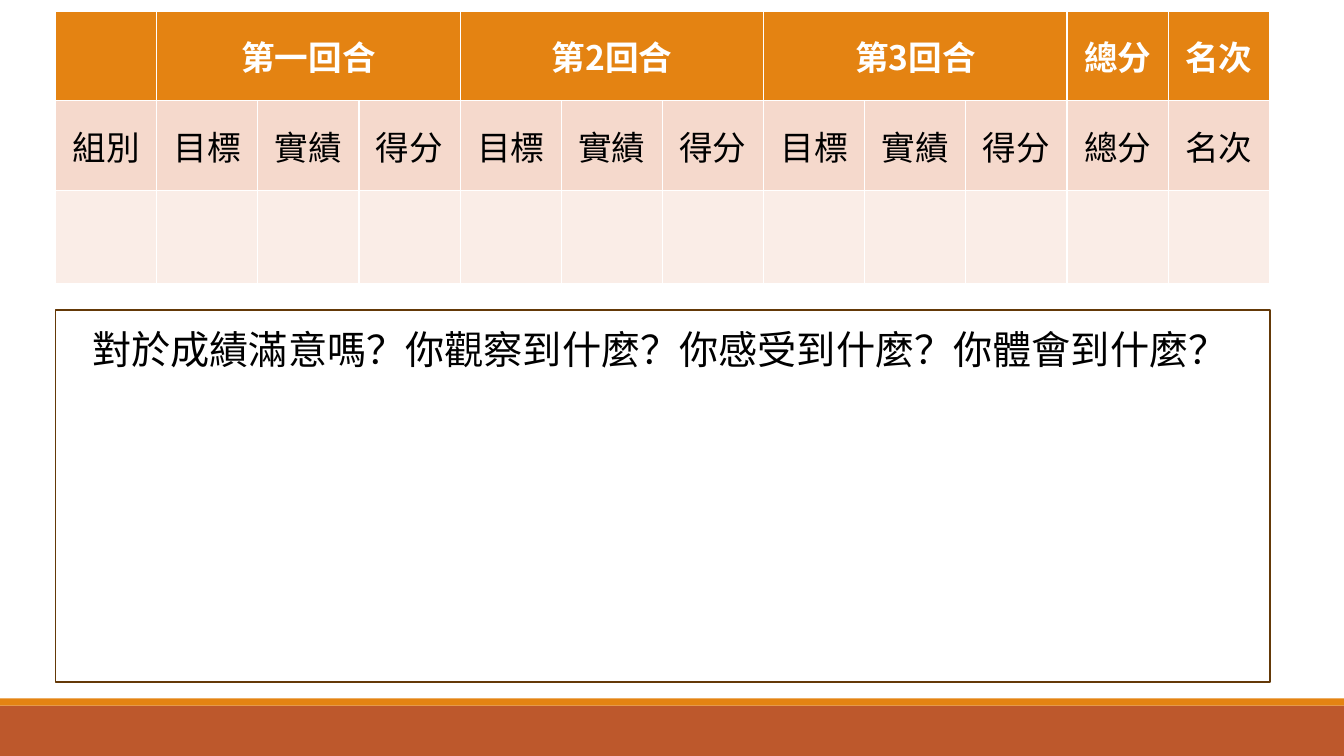
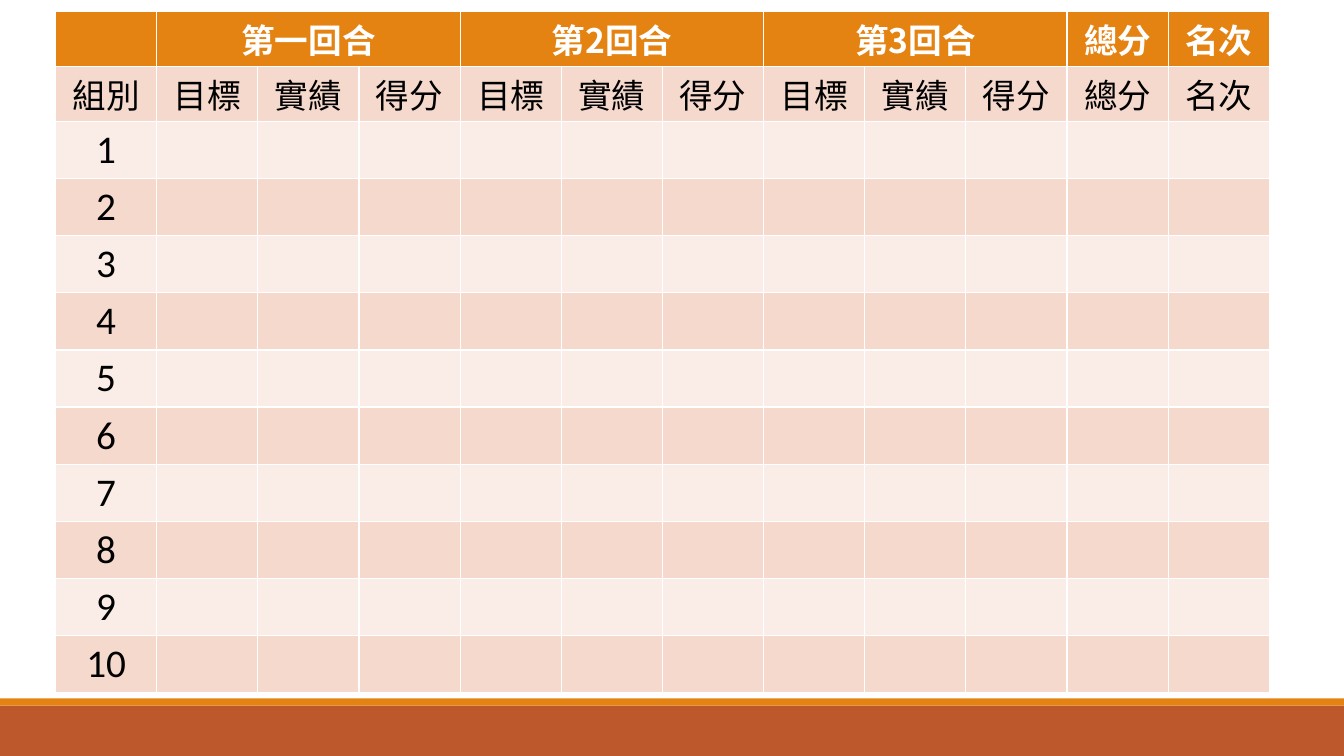
from typing import NamedTuple, Optional

from lxml.etree import SubElement
from pptx import Presentation
from pptx.dml.color import RGBColor
from pptx.enum.shapes import MSO_SHAPE as Preset
from pptx.enum.text import MSO_ANCHOR as Anchor, PP_ALIGN as Align
from pptx.oxml.ns import qn
from pptx.slide import Slide
from pptx.text.text import TextFrame
from pptx.util import Cm, Pt

ORANGE, RUST, BROWN = "E48312", "BD582C", "643908"
ROW_TINTS = ("FAEDE7", "F5D9CC")
WHITE, BLACK = "FFFFFF", "000000"
CJK, LATIN = "Noto Sans CJK SC", "Calibri"
SLIDE_WIDTH, SLIDE_HEIGHT = 33.87, 19.05
MARGIN, TABLE_TOP, COLUMN_WIDTH = 1.4, 0.28, 2.55
ROUNDS = ("第一回合", "第2回合", "第3回合")
MEASURES = ("目標", "實績", "得分")
TOTALS = ("總分", "名次")
SUBHEADS = ("組別", *MEASURES * len(ROUNDS), *TOTALS)
TABLE_WIDTH = COLUMN_WIDTH * len(SUBHEADS)
QUESTIONS = "對於成績滿意嗎？你觀察到什麼？你感受到什麼？你體會到什麼？"


class Panel(NamedTuple):
    left: float
    top: float
    width: float
    height: float
    fill: Optional[str] = None
    line: Optional[str] = None


FOOTER = (
    Panel(0, 17.78, SLIDE_WIDTH, 1.27, fill=RUST),
    Panel(0, 17.6, SLIDE_WIDTH, 0.18, fill=ORANGE),
)
DISCUSSION = Panel(MARGIN, 7.82, TABLE_WIDTH, 9.37, line=BROWN)


class Scoreboard(NamedTuple):
    groups: tuple[str, ...]
    head_height: float
    group_height: float


def rgb(code: str) -> RGBColor:
    return RGBColor.from_string(code)


def write(frame: TextFrame, text: str, *, size: float = 24, font: str = CJK,
          color: str = BLACK, bold: bool = False, align: Align = Align.CENTER) -> None:
    paragraph = frame.paragraphs[0]
    paragraph.alignment = align
    run = paragraph.add_run()
    run.text = text
    run.font.size, run.font.bold, run.font.name = Pt(size), bold, font
    run.font.color.rgb = rgb(color)
    SubElement(run.font._element, qn("a:ea")).set("typeface", font)


def draw_panel(slide: Slide, panel: Panel) -> None:
    shape = slide.shapes.add_shape(Preset.RECTANGLE, Cm(panel.left), Cm(panel.top),
                                   Cm(panel.width), Cm(panel.height))
    shape.shadow.inherit = False
    if panel.fill:
        shape.fill.solid()
        shape.fill.fore_color.rgb = rgb(panel.fill)
    else:
        shape.fill.background()
    if panel.line:
        shape.line.color.rgb = rgb(panel.line)
        shape.line.width = Pt(1.25)
    else:
        shape.line.fill.background()


def draw_scoreboard(slide: Slide, board: Scoreboard) -> None:
    heights = [board.head_height] * 2 + [board.group_height] * len(board.groups)
    table = slide.shapes.add_table(len(heights), len(SUBHEADS), Cm(MARGIN), Cm(TABLE_TOP),
                                   Cm(TABLE_WIDTH), Cm(sum(heights))).table
    for column in table.columns:
        column.width = Cm(COLUMN_WIDTH)
    for index, (row, height) in enumerate(zip(table.rows, heights)):
        row.height = Cm(height)
        for cell in row.cells:
            cell.fill.solid()
            cell.fill.fore_color.rgb = rgb(ROW_TINTS[index % 2] if index else ORANGE)
            cell.vertical_anchor = Anchor.MIDDLE
            cell.margin_top = cell.margin_bottom = Cm(0.06)
            cell.margin_left = cell.margin_right = Cm(0.25)

    span = len(MEASURES)
    for number, title in enumerate(ROUNDS):
        first = 1 + number * span
        table.cell(0, first).merge(table.cell(0, first + span - 1))
        write(table.cell(0, first).text_frame, title, color=WHITE, bold=True)
    for column, title in enumerate(TOTALS, 1 + span * len(ROUNDS)):
        write(table.cell(0, column).text_frame, title, color=WHITE, bold=True)
    for column, title in enumerate(SUBHEADS):
        write(table.cell(1, column).text_frame, title)
    for row, group in enumerate(board.groups, 2):
        if group:
            write(table.cell(row, 0).text_frame, group, size=28, font=LATIN)


def draw_discussion(slide: Slide) -> None:
    draw_panel(slide, DISCUSSION)
    questions = slide.shapes.add_textbox(Cm(2.08), Cm(8.08), Cm(29.72), Cm(1.45)).text_frame
    questions.word_wrap = True
    write(questions, QUESTIONS, size=28, align=Align.LEFT)


def main() -> None:
    """Build the blank score sheet with its questions and the ten-group score sheet."""
    deck = Presentation()
    deck.slide_width, deck.slide_height = Cm(SLIDE_WIDTH), Cm(SLIDE_HEIGHT)
    boards = (
        Scoreboard(("",), 2.26, 2.34),
        Scoreboard(tuple(str(number) for number in range(1, 11)), 1.39, 1.44),
    )
    for board in boards:
        slide = deck.slides.add_slide(deck.slide_layouts[6])
        for band in FOOTER:
            draw_panel(slide, band)
        draw_scoreboard(slide, board)
    draw_discussion(deck.slides[0])
    deck.save("out.pptx")


if __name__ == "__main__":
    main()
